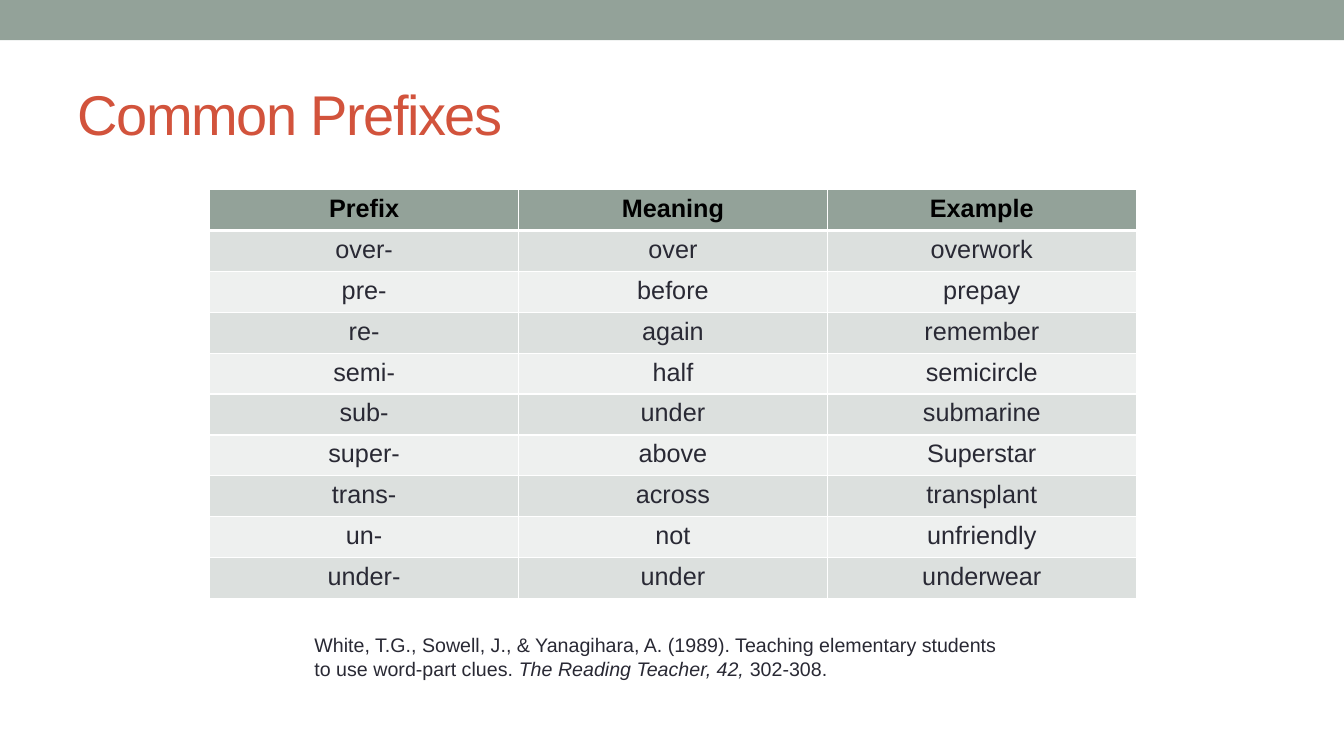
from lxml import etree
from pptx import Presentation
from pptx import util as u
from pptx.dml.color import RGBColor
from pptx.enum import shapes, text
from pptx.oxml import ns

SAGE = RGBColor(0x93, 0xA2, 0x99)
BAND_DARK = RGBColor(0xDC, 0xE0, 0xDE)
BAND_LIGHT = RGBColor(0xEE, 0xF0, 0xEF)
RUST = RGBColor(0xD2, 0x53, 0x3C)
INK = RGBColor(0x29, 0x29, 0x34)
BLACK = RGBColor(0, 0, 0)
WHITE = RGBColor(0xFF, 0xFF, 0xFF)
FONT = "Arial"

PREFIXES = [
    ("Prefix", "Meaning", "Example"),
    ("over-", "over", "overwork"),
    ("pre-", "before", "prepay"),
    ("re-", "again", "remember"),
    ("semi-", "half", "semicircle"),
    ("sub-", "under", "submarine"),
    ("super-", "above", "Superstar"),
    ("trans-", "across", "transplant"),
    ("un-", "not", "unfriendly"),
    ("under-", "under", "underwear"),
]
CITATION = [
    ("White, T.G., Sowell, J., & Yanagihara, A. (1989). "
     "Teaching elementary students to use word-part clues. ", False),
    ("The Reading Teacher, 42, ", True),
    ("302-308.", False),
]


def style_font(font, size, color, bold=False, italic=False):
    font.name = FONT
    font.size = u.Pt(size)
    font.color.rgb = color
    font.bold = bold
    font.italic = italic


def add_band(slide, left, top, width, height):
    band = slide.shapes.add_shape(
        shapes.MSO_SHAPE.RECTANGLE, left, top, width, height)
    band.shadow.inherit = False
    band.fill.solid()
    band.fill.fore_color.rgb = SAGE
    band.line.fill.background()


def add_title(slide, left, top, width, height):
    frame = slide.shapes.add_textbox(left, top, width, height).text_frame
    frame.word_wrap = True
    frame.vertical_anchor = text.MSO_ANCHOR.MIDDLE
    frame.text = "Common Prefixes"
    run = frame.paragraphs[0].runs[0]
    style_font(run.font, 40, RUST)
    run.font._element.set("spc", "-100")


def set_border(cell, side, points):
    properties = cell._tc.get_or_add_tcPr()
    border = etree.SubElement(
        properties, ns.qn(f"a:ln{side}"), w=str(u.Pt(points)))
    fill = etree.SubElement(border, ns.qn("a:solidFill"))
    etree.SubElement(fill, ns.qn("a:srgbClr"), val=str(WHITE))


def style_cell(cell, row):
    is_header = row == 0
    for side in "LRTB":
        under_header = (row, side) in ((0, "B"), (1, "T"))
        set_border(cell, side, 3 if under_header else 1)
    cell.fill.solid()
    band = BAND_DARK if row % 2 else BAND_LIGHT
    cell.fill.fore_color.rgb = SAGE if is_header else band
    paragraph = cell.text_frame.paragraphs[0]
    paragraph.alignment = text.PP_ALIGN.CENTER
    style_font(paragraph.runs[0].font, 18, BLACK if is_header else INK,
               bold=is_header)


def add_prefix_table(slide, left, top, width, height):
    row_count, column_count = len(PREFIXES), len(PREFIXES[0])
    table = slide.shapes.add_table(
        row_count, column_count, left, top, width, height).table
    for row, entry in enumerate(PREFIXES):
        for column, word in enumerate(entry):
            cell = table.cell(row, column)
            cell.text_frame.text = word
            style_cell(cell, row)


def add_citation(slide, left, top, width, height):
    frame = slide.shapes.add_textbox(left, top, width, height).text_frame
    frame.word_wrap = True
    for words, italic in CITATION:
        run = frame.paragraphs[0].add_run()
        run.text = words
        style_font(run.font, 14, INK, italic=italic)


def main():
    deck = Presentation()
    deck.slide_width = u.Inches(13.33)
    deck.slide_height = u.Inches(7.5)
    slide = deck.slides.add_slide(deck.slide_layouts[6])
    add_band(slide, 0, 0, deck.slide_width, u.Inches(0.4))
    add_prefix_table(slide, u.Inches(2.08), u.Inches(1.88),
                     u.Inches(9.19), u.Inches(4.06))
    add_title(slide, u.Inches(0.67), u.Inches(0.58),
              u.Inches(12), u.Inches(1.08))
    add_citation(slide, u.Inches(3.02), u.Inches(6.23),
                 u.Inches(6.98), u.Inches(0.57))
    deck.save("out.pptx")


if __name__ == "__main__":
    main()
